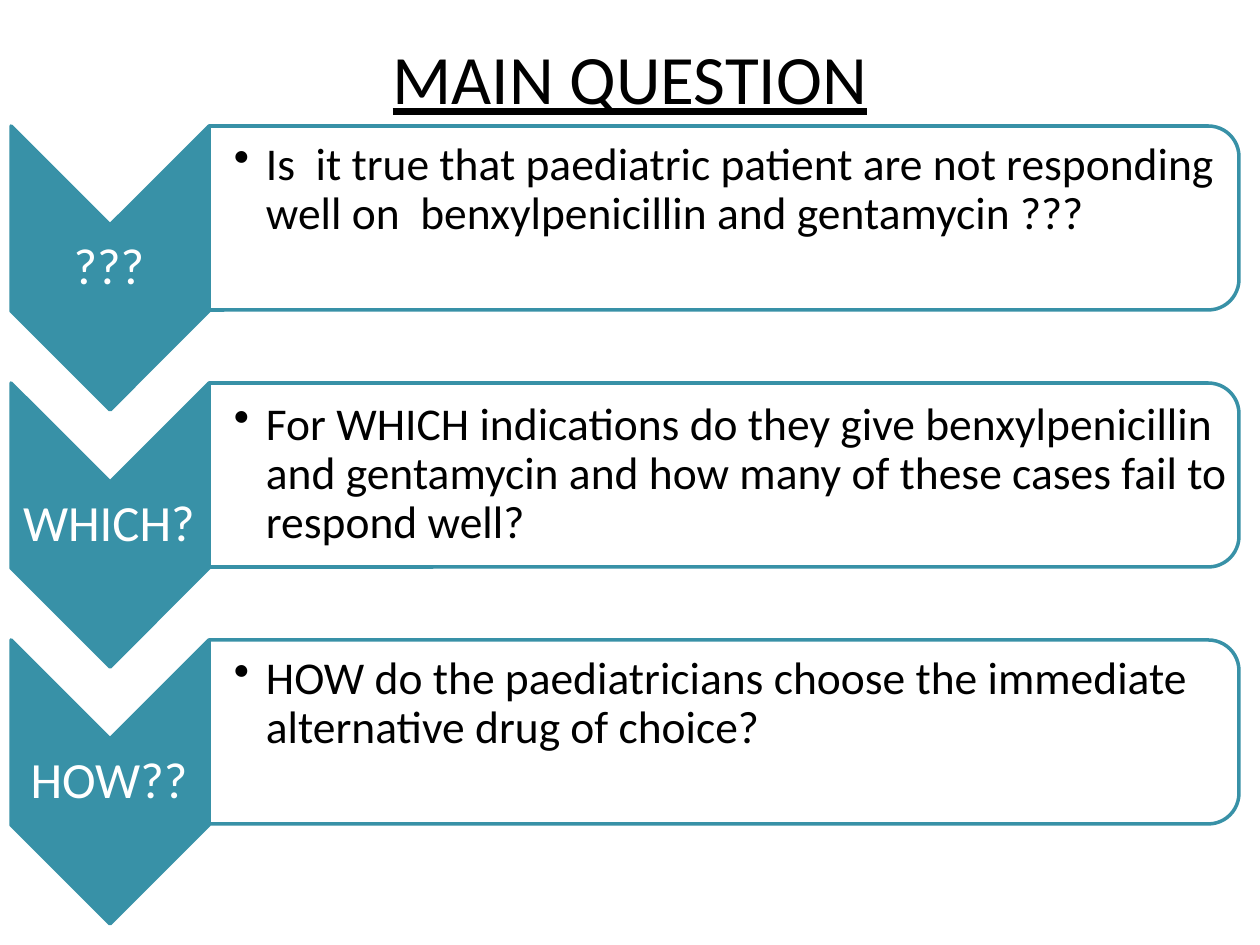
from lxml.etree import SubElement
from pptx import Presentation
from pptx.dml.color import RGBColor
from pptx.enum.shapes import MSO_SHAPE as Shape
from pptx.enum.text import MSO_ANCHOR as Anchor, PP_ALIGN as Align
from pptx.oxml.ns import qn
from pptx.util import Pt

TITLE = "MAIN QUESTION"
# label, question, free space kept below the question
QUESTIONS = [
    ("???", "Is  it true that paediatric patient are not responding well on  "
            "benxylpenicillin and gentamycin ???", 56),
    ("WHICH?", "For WHICH indications do they give benxylpenicillin and gentamycin "
               "and how many of these cases fail to respond well?", 0),
    ("HOW??", "HOW do the paediatricians choose the immediate alternative "
              "drug of choice?", 56),
]

FONT = "Calibri"
TEAL = RGBColor(0x38, 0x91, 0xA7)
WHITE = RGBColor(0xFF, 0xFF, 0xFF)
BLACK = RGBColor(0, 0, 0)

PX = 914400 // 126
ROW_PITCH = 257
INSET = 2
BULLET_INDENT = 32


def px(*lengths):
    return [length * PX for length in lengths]


def add_turned_shape(page, kind, center_x, center_y, width, height, fill):
    """Add a shape turned by 90 degrees; width and height are before turning."""
    box = page.shapes.add_shape(
        kind, *px(center_x - width // 2, center_y - height // 2, width, height))
    box.rotation = 90
    box.shadow.inherit = False
    box.fill.solid()
    box.fill.fore_color.rgb = fill
    box.line.color.rgb = TEAL
    box.line.width = Pt(2)
    return box


def add_span(para, text, size, color):
    span = para.add_run()
    span.text = text
    span.font.name = FONT
    span.font.size = Pt(size)
    span.font.color.rgb = color
    return span


def add_text(page, place, text, size, color, left=INSET, bottom=INSET):
    frame = page.shapes.add_textbox(*px(*place)).text_frame
    frame.word_wrap = True
    frame.vertical_anchor = Anchor.MIDDLE
    frame.margin_left, frame.margin_top, frame.margin_right, frame.margin_bottom = px(
        left, INSET, INSET, bottom)
    para = frame.paragraphs[0]
    para.line_spacing = 0.9
    add_span(para, text, size, color)
    return para


def add_bullet(para):
    props = para._p.get_or_add_pPr()
    props.set("marL", str(BULLET_INDENT * PX))
    props.set("indent", str(-BULLET_INDENT * PX))
    SubElement(props, qn("a:buChar")).set("char", "•")


def add_title(page):
    title = page.shapes.title
    title.left, title.top, title.width, title.height = px(63, 38, 1134, 78)
    title.text_frame.vertical_anchor = Anchor.MIDDLE
    para = title.text_frame.paragraphs[0]
    para.alignment = Align.CENTER
    add_span(para, TITLE, 39.6, BLACK).font.underline = True


def add_question(page, row, label, question, space_below):
    top = row * ROW_PITCH
    add_turned_shape(page, Shape.CHEVRON, 110, top + 268, 284, 198, TEAL)
    para = add_text(page, (10, top + 226, 198, 84), label, 29, WHITE)
    para.alignment = Align.CENTER

    panel = add_turned_shape(page, Shape.ROUND_2_SAME_RECTANGLE,
                             724, top + 218, 184, 1030, WHITE)
    color = panel.fill._xPr.find(qn("a:solidFill"))[0]
    SubElement(color, qn("a:alpha")).set("val", "90000")
    para = add_text(page, (209, top + 135, 1021, 166), question, 26, BLACK,
                    left=25, bottom=INSET + space_below)
    add_bullet(para)


def main():
    deck = Presentation()
    deck.slide_width, deck.slide_height = px(1260, 945)
    page = deck.slides.add_slide(deck.slide_layouts[5])
    add_title(page)
    for row, (label, question, space_below) in enumerate(QUESTIONS):
        add_question(page, row, label, question, space_below)
    deck.save("out.pptx")


if __name__ == "__main__":
    main()
